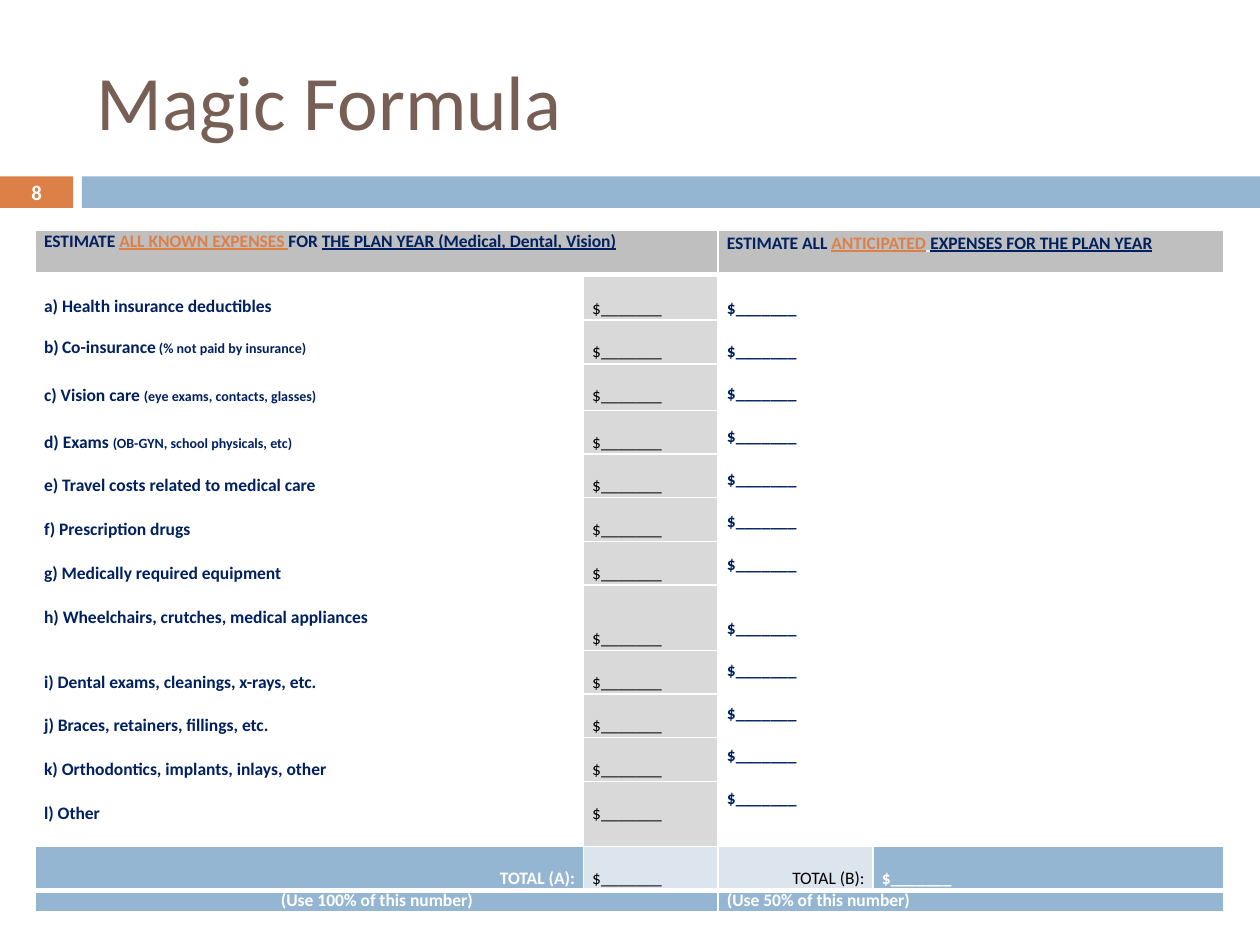
from lxml.etree import SubElement
from pptx import Presentation
from pptx.dml.color import RGBColor
from pptx.enum.shapes import MSO_SHAPE as Shape
from pptx.enum.text import MSO_ANCHOR as Anchor, PP_ALIGN as Align
from pptx.oxml.ns import qn
from pptx.util import Pt

NAVY, ORANGE, BLUE, WHITE, BLACK = "002060", "DD8047", "94B6D2", "FFFFFF", "000000"
PALE_BLUE, GREY, LIGHT_GREY, BROWN = "DCE5EE", "BFBFBF", "D9D9D9", "775F55"
LINE = 12.2  # height of one 10 pt line
AMOUNT = "$_______"

BOLD_NAVY = {"size": 10, "bold": True, "color": NAVY}
SMALL_NAVY = {**BOLD_NAVY, "size": 8}
LINED_NAVY = {**BOLD_NAVY, "underline": True}
LINED_ORANGE = {**LINED_NAVY, "color": ORANGE}
BOLD_WHITE = {**BOLD_NAVY, "color": WHITE}
PLAIN = {"size": 10, "bold": False, "color": BLACK}

COLUMN_WIDTHS = [313.2, 77, 88.6, 200.2]
ROW_HEIGHTS = [25.2, 25.9, 25, 26.6, *[25] * 4, 37.3, *[25] * 3, 37.2, 25, 12.3]
EXPENSES = [
    [("a) Health insurance deductibles", BOLD_NAVY)],
    [("b)", BOLD_NAVY), (" ", SMALL_NAVY), ("Co-insurance", BOLD_NAVY),
     (" (% not paid by insurance)", SMALL_NAVY)],
    [("c) Vision care ", BOLD_NAVY), ("(eye exams, contacts, glasses)", SMALL_NAVY)],
    [("d) Exams ", BOLD_NAVY), ("(OB-GYN, school physicals, etc)", SMALL_NAVY)],
    [("e) Travel costs related to medical care", BOLD_NAVY)],
    [("f) Prescription drugs", BOLD_NAVY)],
    [("g) Medically required equipment", BOLD_NAVY)],
    [("h) Wheelchairs, crutches, medical appliances", BOLD_NAVY)],
    [("i) Dental exams, cleanings, x-rays, etc.", BOLD_NAVY)],
    [("j) Braces, retainers, fillings, etc.", BOLD_NAVY)],
    [("k) Orthodontics, implants, inlays, other", BOLD_NAVY)],
    [("l) Other", BOLD_NAVY)],
]
APPLIANCES_ROW = 8
TOTAL_ROW = len(EXPENSES) + 1
NOTE_ROW = TOTAL_ROW + 1


def rgb(color):
    return RGBColor.from_string(color)


def write(para, spans, align=Align.LEFT):
    """Add (text, format) spans to a paragraph."""
    para.alignment = align
    for text, style in spans:
        span = para.add_run()
        span.text = text
        span.font.name = "Calibri"
        for name, value in style.items():
            if name == "color":
                span.font.color.rgb = rgb(value)
            else:
                setattr(span.font, name, Pt(value) if name == "size" else value)


def add_bar(slide, left, width, color):
    bar = slide.shapes.add_shape(Shape.RECTANGLE, Pt(left), Pt(100.8), Pt(width), Pt(18))
    bar.shadow.inherit = False
    bar.fill.solid()
    bar.fill.fore_color.rgb = rgb(color)
    bar.line.fill.background()


def add_title(slide, text):
    title = slide.shapes.title
    places = {"left": 48.2, "top": 18, "width": 642.2, "height": 77.8}
    for name, value in places.items():
        setattr(title, name, Pt(value))
    title.text_frame.vertical_anchor = Anchor.MIDDLE
    write(title.text_frame.paragraphs[0], [(text, {"size": 44, "color": BROWN})])


def add_page_number(slide, text):
    box = slide.shapes.add_textbox(Pt(0), Pt(100.1), Pt(41.8), Pt(19.4))
    frame = box.text_frame
    frame.word_wrap = True
    frame.vertical_anchor = Anchor.MIDDLE
    frame.margin_top = frame.margin_bottom = 0
    write(frame.paragraphs[0], [(text, {**BOLD_WHITE, "size": 11.9})], Align.CENTER)


def set_borders(cell, top=1, bottom=1):
    """Draw white cell borders, placed ahead of the fill as the schema asks."""
    properties = cell._tc.get_or_add_tcPr()
    widths = {"a:lnL": 1, "a:lnR": 1, "a:lnT": top, "a:lnB": bottom}
    for index, (tag, width) in enumerate(widths.items()):
        border = SubElement(properties, qn(tag), w=str(Pt(width)))
        fill = SubElement(border, qn("a:solidFill"))
        SubElement(fill, qn("a:srgbClr"), val=WHITE)
        properties.insert(index, border)


def fill_cell(cell, spans, color=None, drop=0, align=Align.LEFT):
    """Write a cell's first line, drop points below its top edge."""
    cell.margin_left = cell.margin_right = Pt(5)
    cell.margin_top, cell.margin_bottom = Pt(drop), 0
    write(cell.text_frame.paragraphs[0], spans, align)
    if color:
        cell.fill.solid()
        cell.fill.fore_color.rgb = rgb(color)
    else:
        cell.fill.background()


def fill_anticipated(cell):
    fill_cell(cell, [(AMOUNT, BOLD_NAVY)], drop=13.4)
    for row in range(2, TOTAL_ROW):
        para = cell.text_frame.add_paragraph()
        para.space_before = Pt(2 * LINE if row == APPLIANCES_ROW else LINE)
        write(para, [(AMOUNT, BOLD_NAVY)])


def add_table(slide):
    frame = slide.shapes.add_table(len(ROW_HEIGHTS), len(COLUMN_WIDTHS), Pt(20.2), Pt(131.8),
                                   Pt(sum(COLUMN_WIDTHS)), Pt(sum(ROW_HEIGHTS)))
    table = frame.table
    table.first_row = table.horz_banding = False
    for column, width in zip(table.columns, COLUMN_WIDTHS):
        column.width = Pt(width)
    for row, height in zip(table.rows, ROW_HEIGHTS):
        row.height = Pt(height)
    for row in (0, NOTE_ROW):
        for column in (0, 2):
            table.cell(row, column).merge(table.cell(row, column + 1))
    table.cell(1, 2).merge(table.cell(TOTAL_ROW - 1, 3))
    for row in range(len(ROW_HEIGHTS)):
        for column in range(len(COLUMN_WIDTHS)):
            set_borders(table.cell(row, column), top=3 if row == NOTE_ROW else 1,
                        bottom=3 if row == 0 else 1)
    return table


def main():
    deck = Presentation()
    deck.slide_width, deck.slide_height = Pt(720), Pt(540)
    slide = deck.slides.add_slide(deck.slide_layouts[5])
    add_bar(slide, 0, 41.8, ORANGE)
    add_bar(slide, 46.8, 673.2, BLUE)

    table = add_table(slide)
    fill_cell(table.cell(0, 0), [
        ("ESTIMATE ", BOLD_NAVY), ("ALL KNOWN EXPENSES ", LINED_ORANGE), ("FOR ", BOLD_NAVY),
        ("THE PLAN YEAR (Medical, Dental, Vision)", LINED_NAVY)], GREY)
    fill_cell(table.cell(0, 2), [
        ("ESTIMATE ALL ", BOLD_NAVY), ("ANTICIPATED", LINED_ORANGE),
        (" ", {**LINED_NAVY, "size": 11, "color": "EAF0F6"}),
        ("EXPENSES FOR THE PLAN YEAR", LINED_NAVY)], GREY)

    label_drops = {2: 9.8}
    amount_drops = {1: 13.4, APPLIANCES_ROW: 2 * LINE}
    for row, spans in enumerate(EXPENSES, 1):
        fill_cell(table.cell(row, 0), spans, drop=label_drops.get(row, LINE))
        fill_cell(table.cell(row, 1), [(AMOUNT, PLAIN)], LIGHT_GREY,
                  amount_drops.get(row, LINE))
    fill_anticipated(table.cell(1, 2))

    totals = [("TOTAL (A):", BOLD_WHITE, BLUE, Align.RIGHT),
              (AMOUNT, PLAIN, PALE_BLUE, Align.LEFT),
              ("TOTAL (B):", PLAIN, PALE_BLUE, Align.RIGHT),
              (AMOUNT, BOLD_WHITE, BLUE, Align.LEFT)]
    for column, (text, style, color, align) in enumerate(totals):
        fill_cell(table.cell(TOTAL_ROW, column), [(text, style)], color, LINE, align)
    fill_cell(table.cell(NOTE_ROW, 0), [("(Use 100% of this number)", BOLD_WHITE)], BLUE,
              align=Align.CENTER)
    fill_cell(table.cell(NOTE_ROW, 2), [("(Use 50% of this number)", BOLD_WHITE)], BLUE)

    add_title(slide, "Magic Formula")
    add_page_number(slide, "8")
    deck.save("out.pptx")


if __name__ == "__main__":
    main()
